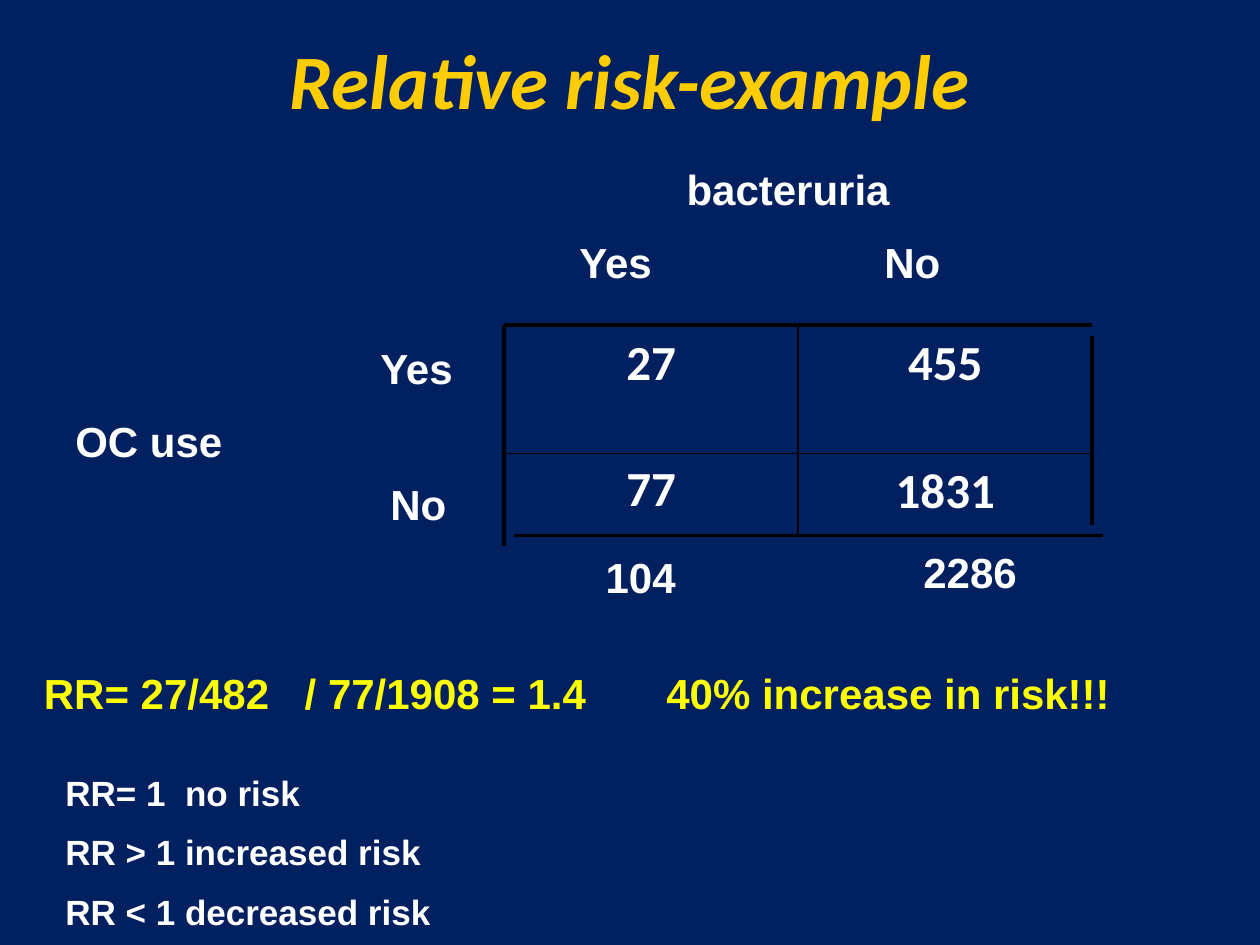
from lxml.etree import SubElement
from pptx import Presentation
from pptx.dml.color import RGBColor
from pptx.enum.shapes import MSO_CONNECTOR as Connector
from pptx.enum.text import MSO_ANCHOR as Anchor, PP_ALIGN as Align
from pptx.oxml.ns import qn
from pptx.util import Inches, Pt

NAVY, GOLD, YELLOW, WHITE, BLACK = "002060", "FFCC00", "FFFF00", "FFFFFF", "000000"


def colour(value):
    return RGBColor.from_string(value)


def add_text(page, text, left, top, width, height, size=24, font="Arial", fill=WHITE,
             align=Align.LEFT, anchor=Anchor.TOP, italic=False, before=0, tabs=()):
    box = page.shapes.add_textbox(Inches(left), Inches(top), Inches(width), Inches(height))
    frame = box.text_frame
    frame.word_wrap = True
    frame.vertical_anchor = anchor
    for index, line in enumerate(text.split("\n")):
        para = frame.add_paragraph() if index else frame.paragraphs[0]
        para.alignment = align
        if tabs:
            stops = SubElement(para._p.get_or_add_pPr(), qn("a:tabLst"))
            for stop in tabs:
                SubElement(stops, qn("a:tab"), pos=str(Inches(stop)), algn="l")
        if index and before:
            para.space_before = Pt(before)
        span = para.add_run()
        span.text = line
        span.font.name, span.font.size = font, Pt(size)
        span.font.bold, span.font.italic = True, italic
        span.font.color.rgb = colour(fill)


def add_line(page, start, end, width):
    line = page.shapes.add_connector(Connector.STRAIGHT, *map(Inches, start + end))
    line.line.color.rgb = colour(BLACK)
    line.line.width = Pt(width)
    SubElement(line._element.spPr, qn("a:effectLst"))


def add_grid(page, left, top, width, height):
    middle, right = left + width / 2, left + width
    divider, bottom = top + 1.02, top + height
    cells = [("27", left, top), ("455", middle, top),
             ("77", left, divider - 0.02), ("1831", middle, divider)]
    for value, x, y in cells:
        add_text(page, value, x, y, width / 2, 1, size=28, font="Calibri", align=Align.CENTER)
    rules = [((left, top), (right, top), 2.25),
             ((left, divider), (right, divider), 1),
             ((left + 0.08, bottom), (right + 0.08, bottom), 2.25),
             ((left, top), (left, bottom + 0.08), 2.25),
             ((middle, top), (middle, bottom), 1),
             ((right, top + 0.09), (right, bottom - 0.08), 2.25)]
    for start, end, weight in rules:
        add_line(page, start, end, weight)


def add_labels(page, left, top):
    labels = [("OC use", 0, 2, 2), ("Yes", 2.42, 1.42, 0.83), ("No", 2.5, 2.5, 0.83),
              ("Yes", 4, 0.58, 1), ("No", 6.42, 0.58, 1.08), ("2286", 6.73, 3.04, 0.94)]
    for text, x, y, width in labels:
        add_text(page, text, left + x, top + y, width, 0.5)
    for text, x, y, width in [("bacteruria", 3.92, 0, 3.67), ("104", 4, 3.08, 1.17)]:
        add_text(page, text, left + x, top + y, width, 0.5, align=Align.CENTER)


def add_conclusion(page, left, top, width):
    add_text(page, "RR= 27/482\t/ 77/1908 = 1.4\t40% increase in risk!!!",
             left, top, width, 0.5, fill=YELLOW, tabs=(2.07, 4.94))
    add_text(page, "RR= 1\tno risk\nRR > 1 increased risk\nRR < 1 decreased risk",
             left + 0.17, top + 0.82, 5.42, 1.43, size=20, before=10, tabs=(0.95,))


def main():
    deck = Presentation()
    deck.slide_width, deck.slide_height = Inches(10), Inches(7.5)
    page = deck.slides.add_slide(deck.slide_layouts[6])
    page.background.fill.solid()
    page.background.fill.fore_color.rgb = colour(NAVY)
    add_text(page, "Relative risk-example", 0.5, 0, 9, 1.25, size=44, font="Calibri",
             fill=GOLD, align=Align.CENTER, anchor=Anchor.MIDDLE, italic=True)
    add_grid(page, 4, 2.58, 4.67, 1.67)
    add_labels(page, 0.5, 1.25)
    add_conclusion(page, 0.25, 5.25, 8.92)
    deck.save("out.pptx")


if __name__ == "__main__":
    main()
